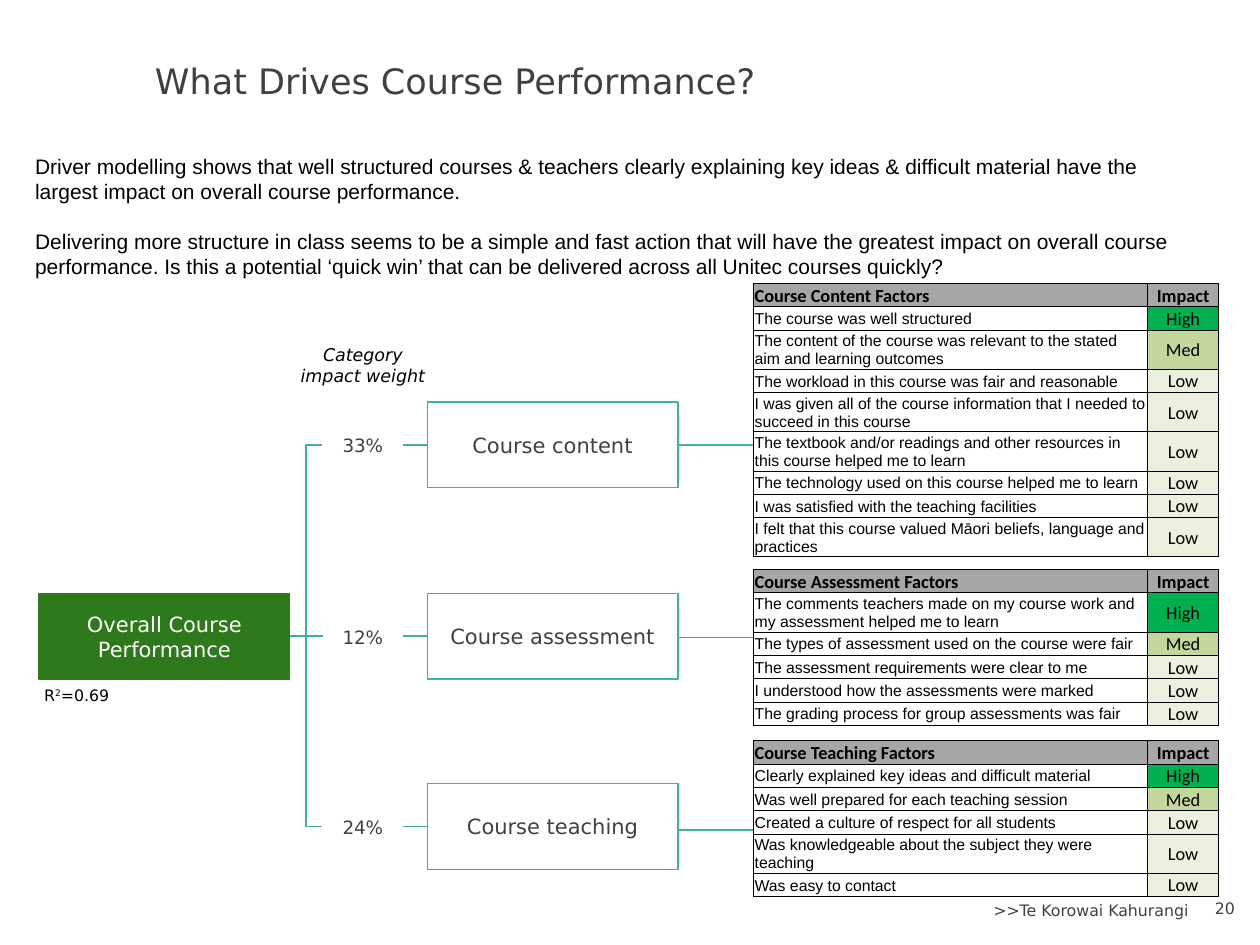
from dataclasses import dataclass
from lxml.etree import SubElement
from pptx import Presentation
from pptx.dml.color import RGBColor
from pptx.enum.shapes import MSO_CONNECTOR as Link, MSO_SHAPE as Preset
from pptx.enum.text import MSO_ANCHOR as Anchor, MSO_AUTO_SIZE as Fit, PP_ALIGN as Align
from pptx.oxml.ns import qn
from pptx.util import Inches, Pt


@dataclass(frozen=True)
class Theme:
    ink: str = "404040"
    black: str = "000000"
    white: str = "FFFFFF"
    green: str = "2E791C"
    teal: str = "3FB19F"
    header: str = "A6A6A6"
    display: str = "DejaVu Sans"
    body: str = "Arial"
    grid: str = "Calibri"
    title: float = 20
    large: float = 12
    medium: float = 10.5
    caption: float = 10
    small: float = 9


@dataclass(frozen=True)
class Driver:
    name: str
    weight: str
    middle: float
    link: float
    table_top: float
    factors: tuple


THEME = Theme()
IMPACT_FILLS = {"High": "00B050", "Med": "C3D69B", "Low": "EBF1DE"}
ROOT_MIDDLE = 5.05
BOX_WIDTH, BOX_HEIGHT = 1.99, 0.68
ROOT_LEFT, ROOT_RIGHT = 0.31, 2.3
WEIGHT_LEFT, WEIGHT_RIGHT = 2.56, 3.2
BOX_LEFT, BOX_RIGHT = 3.39, 5.38
TABLE_LEFT, COLUMNS = 5.98, (3.13, 0.56)
SINGLE_ROW, DOUBLE_ROW, LINE_CHARACTERS = 0.18, 0.31, 53

INTRO = (
    "Driver modelling shows that well structured courses & teachers clearly explaining key ideas & difficult material have the largest impact on overall course performance.",
    "Delivering more structure in class seems to be a simple and fast action that will have the greatest impact on overall course performance. Is this a potential ‘quick win’ that can be delivered across all Unitec courses quickly?",
)
DRIVERS = (
    Driver("Content", "33%", 3.53, 3.53, 2.25, (
        ("The course was well structured", "High"),
        ("The content of the course was relevant to the stated aim and learning outcomes", "Med"),
        ("The workload in this course was fair and reasonable", "Low"),
        ("I was given all of the course information that I needed to succeed in this course", "Low"),
        ("The textbook and/or readings and other resources in this course helped me to learn", "Low"),
        ("The technology used on this course helped me to learn", "Low"),
        ("I was satisfied with the teaching facilities", "Low"),
        ("I felt that this course valued Māori beliefs, language and practices", "Low"),
    )),
    Driver("Assessment", "12%", ROOT_MIDDLE, 5.06, 4.52, (
        ("The comments teachers made on my course work and my assessment helped me to learn", "High"),
        ("The types of assessment used on the course were fair", "Med"),
        ("The assessment requirements were clear to me", "Low"),
        ("I understood how the assessments were marked", "Low"),
        ("The grading process for group assessments was fair", "Low"),
    )),
    Driver("Teaching", "24%", 6.56, 6.59, 5.88, (
        ("Clearly explained key ideas and difficult material", "High"),
        ("Was well prepared for each teaching session", "Med"),
        ("Created a culture of respect for all students", "Low"),
        ("Was knowledgeable about the subject they were teaching", "Low"),
        ("Was easy to contact", "Low"),
    )),
)


def apply(target, values):
    for name, value in values.items():
        setattr(target, name, value)


def add_span(para, text, size, color=THEME.ink, font=THEME.display, **style):
    span = para.add_run()
    span.text = text
    apply(span.font, {"size": Pt(size), "name": font, **style})
    span.font.color.rgb = RGBColor.from_string(color)
    return span


def write(frame, text, size, align=Align.LEFT, anchor=Anchor.MIDDLE, **style):
    apply(frame, {"word_wrap": True, "vertical_anchor": anchor, "auto_size": Fit.NONE})
    para = frame.paragraphs[0]
    para.alignment = align
    add_span(para, text, size, **style)


def add_label(page, area, text, size, align, **style):
    box = page.shapes.add_textbox(*map(Inches, area))
    write(box.text_frame, text, size, align, **style)


def add_title(page, text):
    title = page.shapes.title
    area = dict(zip(("left", "top", "width", "height"), map(Inches, (1.13, 0.36, 7.87, 0.56))))
    apply(title, area)
    write(title.text_frame, text, THEME.title)


def add_intro(page):
    frame = page.shapes.add_textbox(*map(Inches, (0.18, 1.17, 9.49, 1.11))).text_frame
    frame.word_wrap = True
    for index, text in enumerate(INTRO):
        para = frame.add_paragraph() if index else frame.paragraphs[0]
        if index:
            para.space_before = Pt(14)
        add_span(para, text, THEME.large, THEME.black, THEME.body)


def add_fit_note(page):
    frame = page.shapes.add_textbox(*map(Inches, (ROOT_LEFT, 5.39, 1.08, 0.25))).text_frame
    apply(frame, {"word_wrap": True, "margin_left": Inches(0.04), "margin_right": Inches(0.04)})
    para = frame.paragraphs[0]
    spans = [add_span(para, text, THEME.small, THEME.black) for text in ("R", "2", "=0.69")]
    spans[1].font._element.set("baseline", "30000")


def add_node(page, left, middle, text, line, color, fill=None):
    node = page.shapes.add_shape(Preset.RECTANGLE, Inches(left), Inches(middle - BOX_HEIGHT / 2),
                                 Inches(BOX_WIDTH), Inches(BOX_HEIGHT))
    node.shadow.inherit = False
    if fill:
        node.fill.solid()
        node.fill.fore_color.rgb = RGBColor.from_string(fill)
    else:
        node.fill.background()
    node.line.color.rgb = RGBColor.from_string(line)
    node.line.width = Pt(0.75)
    write(node.text_frame, text, THEME.large, Align.CENTER, color=color)


def add_link(page, start, end, kind=Link.STRAIGHT):
    link = page.shapes.add_connector(kind, *map(Inches, (*start, *end)))
    link.line.color.rgb = RGBColor.from_string(THEME.teal)
    link.line.width = Pt(1)
    SubElement(link._element.spPr, qn("a:effectLst"))


def add_borders(cell):
    properties = cell._tc.get_or_add_tcPr()
    for index, side in enumerate(("lnL", "lnR", "lnT", "lnB")):
        border = properties.makeelement(qn(f"a:{side}"), {"w": str(Pt(0.5))})
        fill = SubElement(border, qn("a:solidFill"))
        SubElement(fill, qn("a:srgbClr"), val=THEME.black)
        properties.insert(index, border)


def fill_cell(cell, text, size, fill, align, anchor, **style):
    edge = Inches(0.01)
    apply(cell, {"margin_left": edge, "margin_right": edge, "margin_top": edge,
                 "margin_bottom": 0, "vertical_anchor": anchor})
    if fill:
        cell.fill.solid()
        cell.fill.fore_color.rgb = RGBColor.from_string(fill)
    else:
        cell.fill.background()
    para = cell.text_frame.paragraphs[0]
    para.alignment = align
    add_span(para, text, size, THEME.black, **style)
    add_borders(cell)


def add_factor_table(page, driver):
    rows = ((f"Course {driver.name} Factors", "Impact"), *driver.factors)
    heights = [DOUBLE_ROW if len(text) > LINE_CHARACTERS else SINGLE_ROW for text, _ in rows]
    area = (TABLE_LEFT, driver.table_top, sum(COLUMNS), sum(heights))
    table = page.shapes.add_table(len(rows), len(COLUMNS), *map(Inches, area)).table
    apply(table, {"first_row": False, "horz_banding": False})
    for column, width in zip(table.columns, COLUMNS):
        column.width = Inches(width)
    for index, (factor, impact) in enumerate(rows):
        table.rows[index].height = Inches(heights[index])
        head = index == 0
        anchor = Anchor.BOTTOM if head else Anchor.MIDDLE
        size, font = (THEME.medium, THEME.grid) if head else (THEME.small, THEME.body)
        fill_cell(table.cell(index, 0), factor, size, THEME.header if head else None,
                  Align.LEFT, anchor, font=font, bold=head)
        fill_cell(table.cell(index, 1), impact, THEME.medium, IMPACT_FILLS.get(impact, THEME.header),
                  Align.CENTER, anchor, font=THEME.grid, bold=head)


def add_driver(page, driver):
    middle = driver.middle
    kind = Link.STRAIGHT if middle == ROOT_MIDDLE else Link.ELBOW
    add_link(page, (ROOT_RIGHT, ROOT_MIDDLE), (WEIGHT_LEFT, middle), kind)
    add_label(page, (WEIGHT_LEFT, middle - 0.21, WEIGHT_RIGHT - WEIGHT_LEFT, 0.43),
              driver.weight, THEME.medium, Align.CENTER)
    add_link(page, (BOX_LEFT, middle), (WEIGHT_RIGHT, middle))
    add_node(page, BOX_LEFT, middle, f"Course {driver.name.lower()}", THEME.teal, THEME.ink)
    add_factor_table(page, driver)
    add_link(page, (TABLE_LEFT, driver.link), (BOX_RIGHT, driver.link))


def main():
    deck = Presentation()
    apply(deck, {"slide_width": Inches(10), "slide_height": Inches(7.5)})
    page = deck.slides.add_slide(deck.slide_layouts.get_by_name("Title Only"))
    add_title(page, "What Drives Course Performance?")
    add_intro(page)
    add_label(page, (5.38, 7.1, 4.15, 0.25), ">>Te Korowai Kahurangi", THEME.small, Align.RIGHT)
    add_label(page, (9.44, 7.08, 0.46, 0.25), "20", THEME.small, Align.RIGHT)
    add_node(page, ROOT_LEFT, ROOT_MIDDLE, "Overall Course Performance", THEME.green, THEME.white, THEME.green)
    add_fit_note(page)
    add_label(page, (2.26, 2.68, 1.24, 0.44), "Category impact weight", THEME.caption,
              Align.CENTER, color=THEME.black, italic=True)
    for driver in DRIVERS:
        add_driver(page, driver)
    deck.save("out.pptx")


if __name__ == "__main__":
    main()
